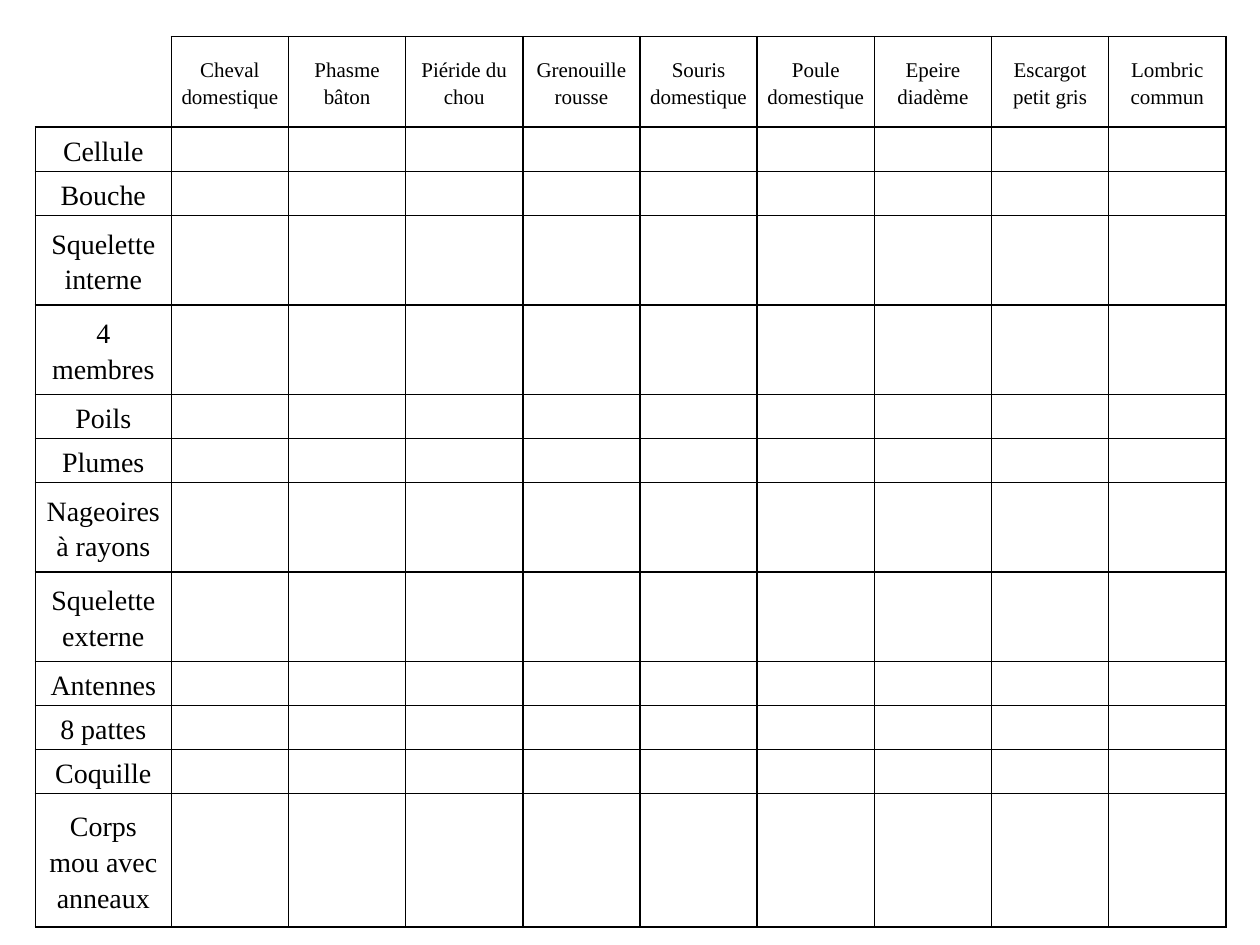
from lxml.etree import SubElement
from pptx import Presentation
from pptx.dml.color import RGBColor
from pptx.enum.text import MSO_ANCHOR, PP_ALIGN
from pptx.oxml.ns import qn
from pptx.util import Inches, Pt

BLACK = RGBColor(0, 0, 0)
ANIMALS = [
    "Cheval domestique", "Phasme bâton", "Piéride du chou",
    "Grenouille rousse", "Souris domestique", "Poule domestique",
    "Epeire diadème", "Escargot petit gris", "Lombric commun",
]
ATTRIBUTES = [
    ("Cellule", 0.35), ("Bouche", 0.35), ("Squelette interne", 0.71),
    ("4 membres", 0.71), ("Poils", 0.35), ("Plumes", 0.35),
    ("Nageoires à rayons", 0.71), ("Squelette externe", 0.71),
    ("Antennes", 0.35), ("8 pattes", 0.35), ("Coquille", 0.35),
    ("Corps mou avec anneaux", 1.06),
]
CELL_FORMAT = {
    "margin_left": Inches(0.07), "margin_right": Inches(0.07),
    "margin_top": 0, "margin_bottom": 0,
    "vertical_anchor": MSO_ANCHOR.MIDDLE,
}
PARA_FORMAT = {
    "alignment": PP_ALIGN.CENTER, "line_spacing": 1.15, "space_before": Pt(6),
}


def set_format(target, values):
    for name, value in values.items():
        setattr(target, name, value)


def add_border(cell, side, visible):
    line = SubElement(cell._tc.get_or_add_tcPr(), qn(f"a:ln{side}"), w=str(Pt(1)))
    if visible:
        fill = SubElement(line, qn("a:solidFill"))
        SubElement(fill, qn("a:srgbClr"), val=str(BLACK))
    else:
        SubElement(line, qn("a:noFill"))


deck = Presentation()
set_format(deck, {"slide_width": Inches(10), "slide_height": Inches(7.5)})
page = deck.slides.add_slide(deck.slide_layouts[6])

heights = [0.72] + [height for label, height in ATTRIBUTES]
widths = [1.08] + [0.93] * len(ANIMALS)
table = page.shapes.add_table(
    len(heights), len(widths), Inches(0.28), Inches(0.29),
    Inches(sum(widths)), Inches(sum(heights)),
).table
set_format(table, {"first_row": False, "horz_banding": False})
for column, width in zip(table.columns, widths):
    column.width = Inches(width)
for row, height in zip(table.rows, heights):
    row.height = Inches(height)

for row_index, row in enumerate(table.rows):
    for column_index, cell in enumerate(row.cells):
        corner = row_index == column_index == 0
        set_format(cell, CELL_FORMAT)
        for side in "LRTB":
            add_border(cell, side, not corner or side in "RB")
        cell.fill.background()
        if corner or (row_index and column_index):
            continue
        para = cell.text_frame.paragraphs[0]
        set_format(para, PARA_FORMAT)
        span = para.add_run()
        if row_index == 0:
            span.text = ANIMALS[column_index - 1]
            para.space_after = Pt(6)
        else:
            span.text = ATTRIBUTES[row_index - 1][0]
        size = 12 if row_index == 0 else 16
        set_format(span.font, {"name": "Times New Roman", "size": Pt(size)})
        span.font.color.rgb = BLACK

deck.save("out.pptx")
